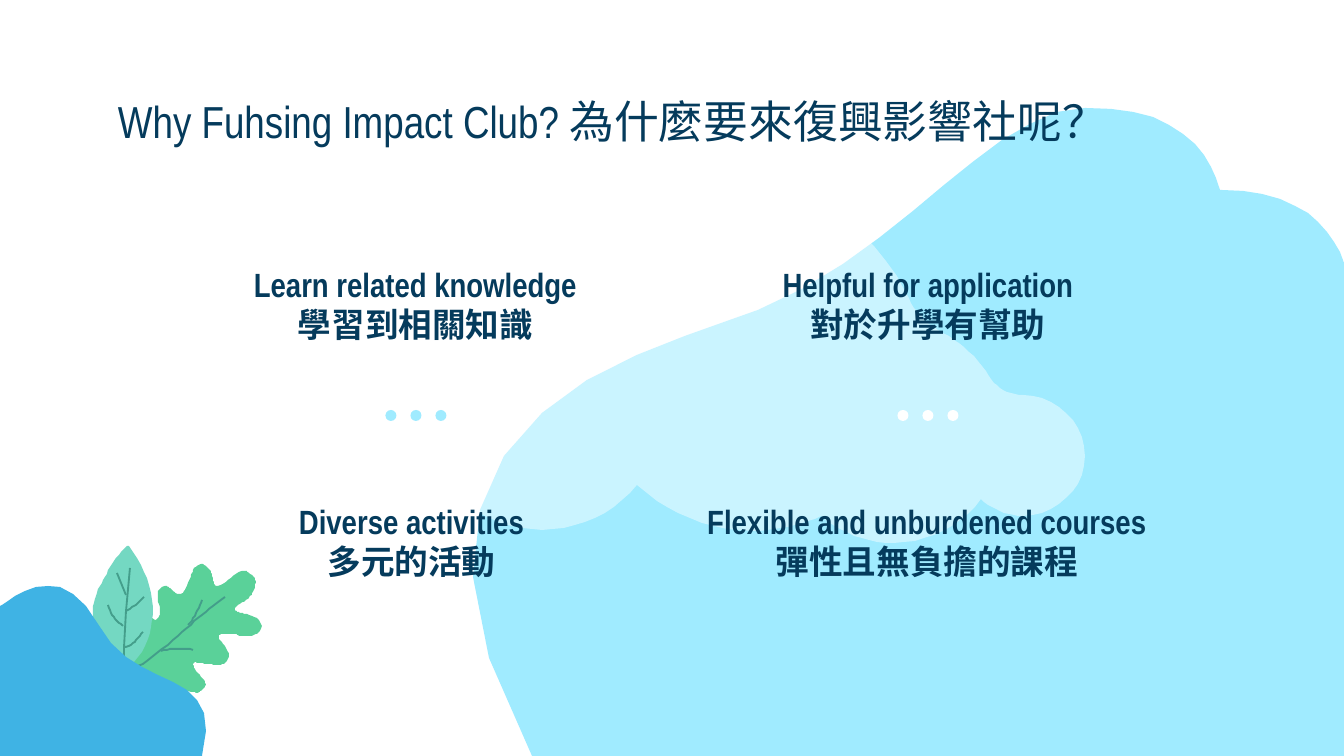
from pptx import Presentation
from pptx.dml.color import RGBColor
from pptx.enum.shapes import MSO_SHAPE
from pptx.enum.text import MSO_ANCHOR, PP_ALIGN
from pptx.oxml.ns import qn
from pptx.util import Pt
from lxml.etree import SubElement

SCALE = 914400 / 134.4  # EMU in one px
WIDTH, HEIGHT = 1344, 756
CURVE_STEPS = 10
FONT = "Arial Narrow"
COLORS = {
    "navy": "053B5C", "sky": "A0EBFF", "white": "FFFFFF", "hill": "3FB3E4",
    "oak": "5AD199", "oak_vein": "439D8A", "leaf": "74D8C2", "leaf_vein": "449E8B",
}

# An outline is a start point, then lines (x, y) or cubic curves (six numbers).
OAK = [
    (203, 564), (195, 564, 192, 571, 191, 577), (188, 583, 185, 594, 180, 594),
    (177, 594, 176, 593, 173, 591), (171, 589, 168, 586, 165, 586),
    (153, 590, 159, 602, 160, 609), (160, 613, 160, 620, 155, 620),
    (145, 614, 144, 605, 136, 603), (129, 603, 128, 609, 128, 613),
    (128, 620, 132, 626, 134, 633), (136, 640, 136, 648, 134, 655),
    (134, 659, 130, 664, 130, 668), (132, 673, 142, 673, 148, 675),
    (153, 676, 160, 677, 165, 680), (173, 683, 184, 692, 194, 692),
    (198, 694, 200, 692, 203, 689), (207, 687, 206, 681, 203, 679),
    (200, 675, 195, 671, 194, 667), (192, 663, 195, 661, 198, 663),
    (202, 663, 206, 664, 207, 664), (210, 664, 214, 665, 216, 665),
    (220, 665, 224, 665, 227, 661), (233, 655, 226, 648, 222, 642),
    (216, 636, 219, 634, 223, 634), (227, 634, 231, 634, 237, 634),
    (238, 636, 241, 636, 245, 636), (251, 636, 258, 636, 261, 629),
    (265, 620, 251, 614, 245, 614), (242, 613, 237, 613, 235, 610),
    (234, 606, 242, 603, 245, 601), (250, 598, 254, 593, 255, 586),
    (257, 581, 254, 575, 249, 573), (248, 572, 246, 571, 245, 571),
    (234, 571, 227, 585, 218, 586), (212, 586, 214, 579, 212, 575),
    (211, 571, 208, 566, 203, 564),
]
OAK_VEINS = [
    [(92, 675), (105, 674, 125, 671, 138, 666), (153, 660, 172, 640, 187, 628),
     (199, 617, 212, 606, 225, 597)],
    [(161, 651), (171, 648, 182, 648, 193, 650)],
    [(202, 600), (198, 609, 195, 618, 188, 625)],
]
LEAF = [
    (127, 546), (117, 555, 110, 566, 105, 577), (99, 587, 94, 598, 93, 610),
    (93, 622, 97, 633, 101, 644), (106, 653, 112, 664, 124, 669),
    (142, 660, 152, 634, 153, 614), (153, 590, 144, 566, 129, 546),
]
LEAF_VEINS = [
    [(130, 568), (126, 612), (124, 648), (124, 673)],
    [(117, 573), (126, 595)],
    [(108, 605), (110, 614, 116, 621, 123, 626)],
    [(107, 641), (109, 649, 115, 656, 122, 661)],
    [(144, 597), (139, 603, 133, 607, 126, 611)],
    [(143, 632), (138, 639, 132, 646, 124, 647)],
]
HILL = [(0, 606), (3, 606, 59, 550, 98, 624), (136, 698, 226, 661, 202, 756), (0, 756)]
BACKDROP = [
    (1220, 190), (1210, 152, 1177, 105, 1085, 108), (991, 110, 913, 245, 758, 310),
    (677, 345, 337, 402, 532, 756), (1344, 756), (1344, 263),
    (1332, 228, 1300, 190, 1220, 190),
]
CLOUD = [
    (753, 195), (704, 195, 660, 215, 629, 249), (609, 270, 579, 282, 550, 282),
    (542, 282), (473, 282, 417, 337, 417, 406), (417, 474, 473, 530, 542, 530),
    (580, 530, 614, 512, 637, 485), (668, 513, 708, 531, 753, 531),
    (777, 531, 800, 525, 821, 516), (840, 532, 866, 543, 894, 543),
    (929, 543, 961, 525, 981, 499), (992, 509, 1007, 516, 1023, 516),
    (1056, 516, 1085, 489, 1085, 456), (1085, 422, 1056, 395, 1023, 395),
    (1009, 395, 996, 388, 989, 376), (978, 358, 962, 343, 943, 333),
    (927, 325, 914, 310, 906, 293), (879, 235, 821, 195, 753, 195),
]
REASONS = [
    ((220, 488, 383, 73), "Diverse activities", "多元的活動"),
    ((224, 251, 383, 73), "Learn related knowledge", "學習到相關知識"),
    ((731, 251, 394, 73), "Helpful for application", "對於升學有幫助"),
    ((688, 488, 478, 73), "Flexible and unburdened courses", "彈性且無負擔的課程"),
]


def px(length):
    return round(length * SCALE)


def color(name):
    return RGBColor.from_string(COLORS[name])


def trace(outline):
    """Return the points of an outline, with its curves cut into short steps."""
    points = [outline[0]]
    for segment in outline[1:]:
        if len(segment) == 2:
            points.append(segment)
            continue
        x0, y0 = points[-1]
        x1, y1, x2, y2, x3, y3 = segment
        for step in range(1, CURVE_STEPS + 1):
            t = step / CURVE_STEPS
            a, b, c, d = (1 - t) ** 3, 3 * t * (1 - t) ** 2, 3 * t * t * (1 - t), t ** 3
            points.append((a * x0 + b * x1 + c * x2 + d * x3,
                           a * y0 + b * y1 + c * y2 + d * y3))
    return points


def draw_outlines(slide, outlines, close):
    first, *others = [trace(outline) for outline in outlines]
    builder = slide.shapes.build_freeform(*first[0], scale=SCALE)
    builder.add_line_segments(first[1:], close=close)
    for points in others:
        builder.move_to(*points[0])
        builder.add_line_segments(points[1:], close=close)
    shape = builder.convert_to_shape()
    shape.shadow.inherit = False
    return shape


def paint(shape, fill, opacity=100):
    shape.fill.solid()
    shape.fill.fore_color.rgb = color(fill)
    shape.line.fill.background()
    if opacity < 100:
        rgb = shape.fill._xPr.find(qn("a:solidFill")).find(qn("a:srgbClr"))
        SubElement(rgb, qn("a:alpha"), val=str(opacity * 1000))


def add_blob(slide, outline, fill, opacity=100):
    paint(draw_outlines(slide, [outline], close=True), fill, opacity)


def add_veins(slide, strokes, stroke_color):
    veins = draw_outlines(slide, strokes, close=False)
    veins.fill.background()
    veins.line.color.rgb = color(stroke_color)
    veins.line.width = Pt(1)


def add_text(slide, box, lines, size, bold=False, align=PP_ALIGN.LEFT):
    frame = slide.shapes.add_textbox(*map(px, box)).text_frame
    frame.word_wrap = True
    frame.vertical_anchor = MSO_ANCHOR.TOP
    frame.margin_left = frame.margin_right = px(13)
    frame.margin_top = frame.margin_bottom = px(13)
    for index, line in enumerate(lines):
        paragraph = frame.add_paragraph() if index else frame.paragraphs[0]
        paragraph.alignment = align
        run = paragraph.add_run()
        run.text = line
        run.font.name = FONT
        run.font.size = Pt(size)
        run.font.bold = bold
        run.font.color.rgb = color("navy")


def add_dots(slide, center, fill, top=410, size=11, pitch=25):
    for offset in (-pitch, 0, pitch):
        left = center + offset - size / 2
        dot = slide.shapes.add_shape(
            MSO_SHAPE.OVAL, px(left), px(top), px(size), px(size))
        dot.shadow.inherit = False
        paint(dot, fill)


def main():
    deck = Presentation()
    deck.slide_width, deck.slide_height = px(WIDTH), px(HEIGHT)
    slide = deck.slides.add_slide(deck.slide_layouts[6])

    add_blob(slide, OAK, "oak")
    for vein in OAK_VEINS:
        add_veins(slide, [vein], "oak_vein")
    add_blob(slide, LEAF, "leaf")
    add_veins(slide, LEAF_VEINS, "leaf_vein")
    add_blob(slide, HILL, "hill")
    add_blob(slide, BACKDROP, "sky")
    add_blob(slide, CLOUD, "white", opacity=45)

    add_text(slide, (105, 81, 1133, 84),
             ["Why Fuhsing Impact Club? 為什麼要來復興影響社呢？"], 24)
    for box, english, chinese in REASONS:
        add_text(slide, box, [english, chinese], 18, True, PP_ALIGN.CENTER)
    add_dots(slide, 416, "sky")
    add_dots(slide, 928, "white")
    deck.save("out.pptx")


if __name__ == "__main__":
    main()
